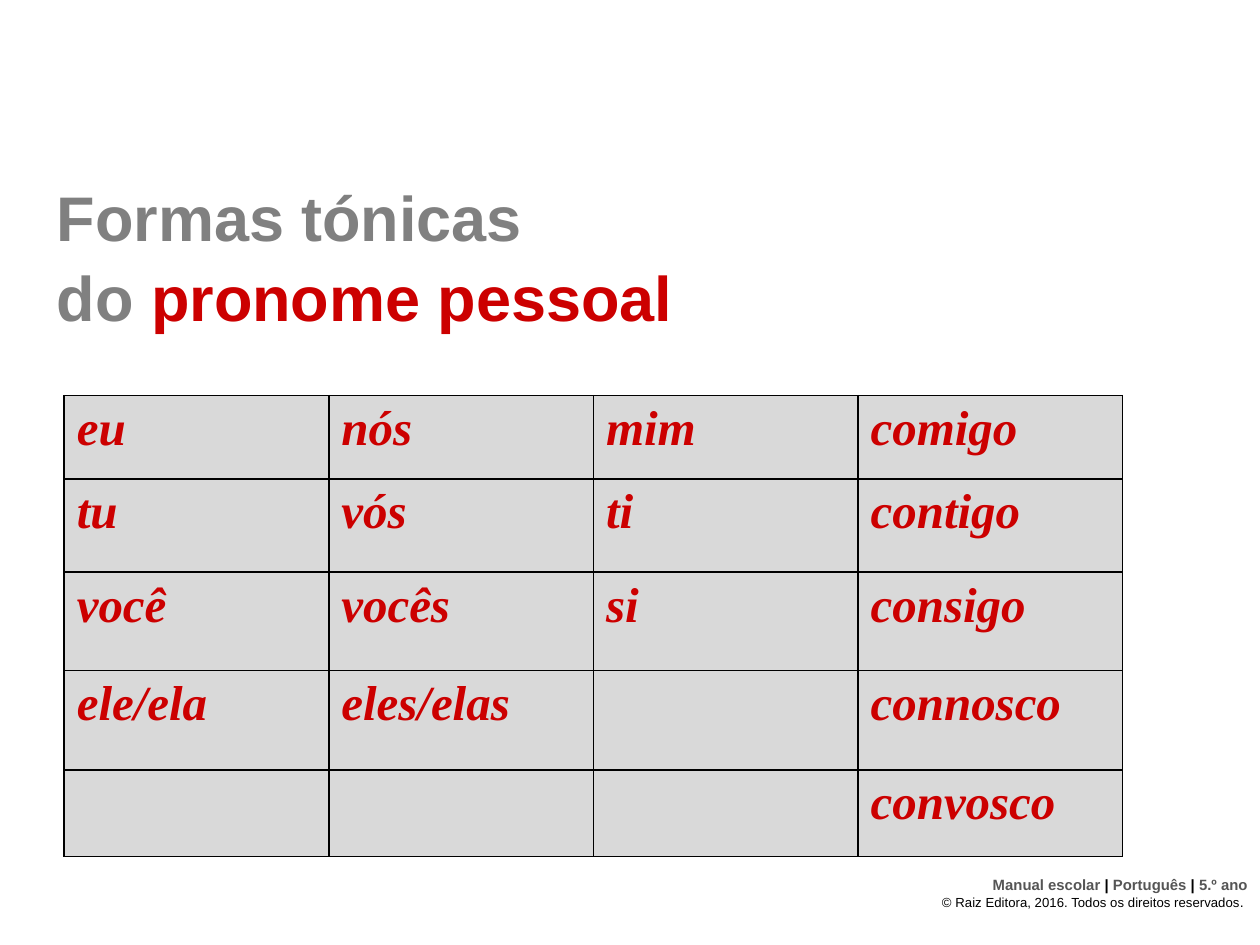
"""Build a slide with a table of the stressed forms of the personal pronoun."""
from dataclasses import dataclass

from lxml.etree import SubElement
from pptx import Presentation
from pptx.dml.color import RGBColor
from pptx.enum.text import MSO_ANCHOR as Anchor, MSO_AUTO_SIZE as AutoSize, PP_ALIGN as Align
from pptx.oxml.ns import qn
from pptx.util import Inches, Pt

RED = RGBColor(0xCC, 0x00, 0x00)
GREY = RGBColor(0x80, 0x80, 0x80)
DARK_GREY = RGBColor(0x55, 0x55, 0x55)
LIGHT_GREY = RGBColor(0xD9, 0xD9, 0xD9)
BLACK = RGBColor(0x00, 0x00, 0x00)

COL_WIDTH = 2.1
ROW_HEIGHTS = (0.66, 0.74, 0.78, 0.79, 0.69)


@dataclass
class PronounRow:
    singular: str = ""
    plural: str = ""
    prepositional: str = ""
    contracted: str = ""

    def forms(self) -> tuple[str, ...]:
        return self.singular, self.plural, self.prepositional, self.contracted


PRONOUNS = (
    PronounRow("eu", "nós", "mim", "comigo"),
    PronounRow("tu", "vós", "ti", "contigo"),
    PronounRow("você", "vocês", "si", "consigo"),
    PronounRow("ele/ela", "eles/elas", contracted="connosco"),
    PronounRow(contracted="convosco"),
)


def add_run(p, text: str, *, size: float, color: RGBColor, font: str = "Arial",
            bold: bool = True, italic: bool = False) -> None:
    r = p.add_run()
    r.text = text
    r.font.name = font
    r.font.size = Pt(size)
    r.font.bold = bold
    r.font.italic = italic
    r.font.color.rgb = color


def add_borders(cell, color: RGBColor, width: float) -> None:
    tc_pr = cell._tc.get_or_add_tcPr()
    for side in ("a:lnL", "a:lnR", "a:lnT", "a:lnB"):
        ln = SubElement(tc_pr, qn(side), w=str(Pt(width)))
        fill = SubElement(ln, qn("a:solidFill"))
        SubElement(fill, qn("a:srgbClr"), val=str(color))


def add_footer(s) -> None:
    tf = s.shapes.add_textbox(Inches(7.13), Inches(6.9), Inches(2.87), Inches(0.38)).text_frame
    tf.word_wrap = True
    tf.auto_size = AutoSize.SHAPE_TO_FIT_TEXT
    p = tf.paragraphs[0]
    p.alignment = Align.RIGHT
    for text, color in (("Manual escolar ", DARK_GREY), ("|", BLACK), (" Português ", DARK_GREY),
                        ("| ", BLACK), ("5.º ano", DARK_GREY)):
        add_run(p, text, size=8.5, color=color)
    p = tf.add_paragraph()
    p.alignment = Align.RIGHT
    add_run(p, "© Raiz Editora, 2016. Todos os direitos reservados", size=7.5, color=BLACK, bold=False)
    add_run(p, ". ", size=8, color=BLACK, bold=False)


def add_title(s) -> None:
    sp = s.shapes.title
    sp.left, sp.top, sp.width, sp.height = Inches(0.35), Inches(1.34), Inches(5.98), Inches(1.52)
    tf = sp.text_frame
    tf.word_wrap = True
    tf.auto_size = AutoSize.NONE
    tf.vertical_anchor = Anchor.TOP
    p = tf.paragraphs[0]
    p.alignment = Align.LEFT
    p.line_spacing = 1.05
    add_run(p, "Formas tónicas", size=36, color=GREY)
    p.add_line_break()
    add_run(p, "do ", size=36, color=GREY)
    add_run(p, "pronome pessoal", size=36, color=RED)


def add_pronoun_table(s) -> None:
    cols = len(PRONOUNS[0].forms())
    table = s.shapes.add_table(len(PRONOUNS), cols, Inches(0.51), Inches(3.14),
                               Inches(cols * COL_WIDTH), Inches(sum(ROW_HEIGHTS))).table
    table.first_row = table.horz_banding = False
    for column in table.columns:
        column.width = Inches(COL_WIDTH)
    for i, (pronoun, height) in enumerate(zip(PRONOUNS, ROW_HEIGHTS)):
        table.rows[i].height = Inches(height)
        for j, form in enumerate(pronoun.forms()):
            cell = table.cell(i, j)
            add_borders(cell, BLACK, 1)
            cell.fill.solid()
            cell.fill.fore_color.rgb = LIGHT_GREY
            if form:
                add_run(cell.text_frame.paragraphs[0], form, size=28, color=RED,
                        font="Times New Roman", italic=True)


def main() -> None:
    prs = Presentation()
    prs.slide_width, prs.slide_height = Inches(10), Inches(7.5)
    s = prs.slides.add_slide(prs.slide_layouts[0])
    subtitle = s.placeholders[1].element
    subtitle.getparent().remove(subtitle)
    add_footer(s)
    add_title(s)
    add_pronoun_table(s)
    prs.save("out.pptx")


if __name__ == "__main__":
    main()
